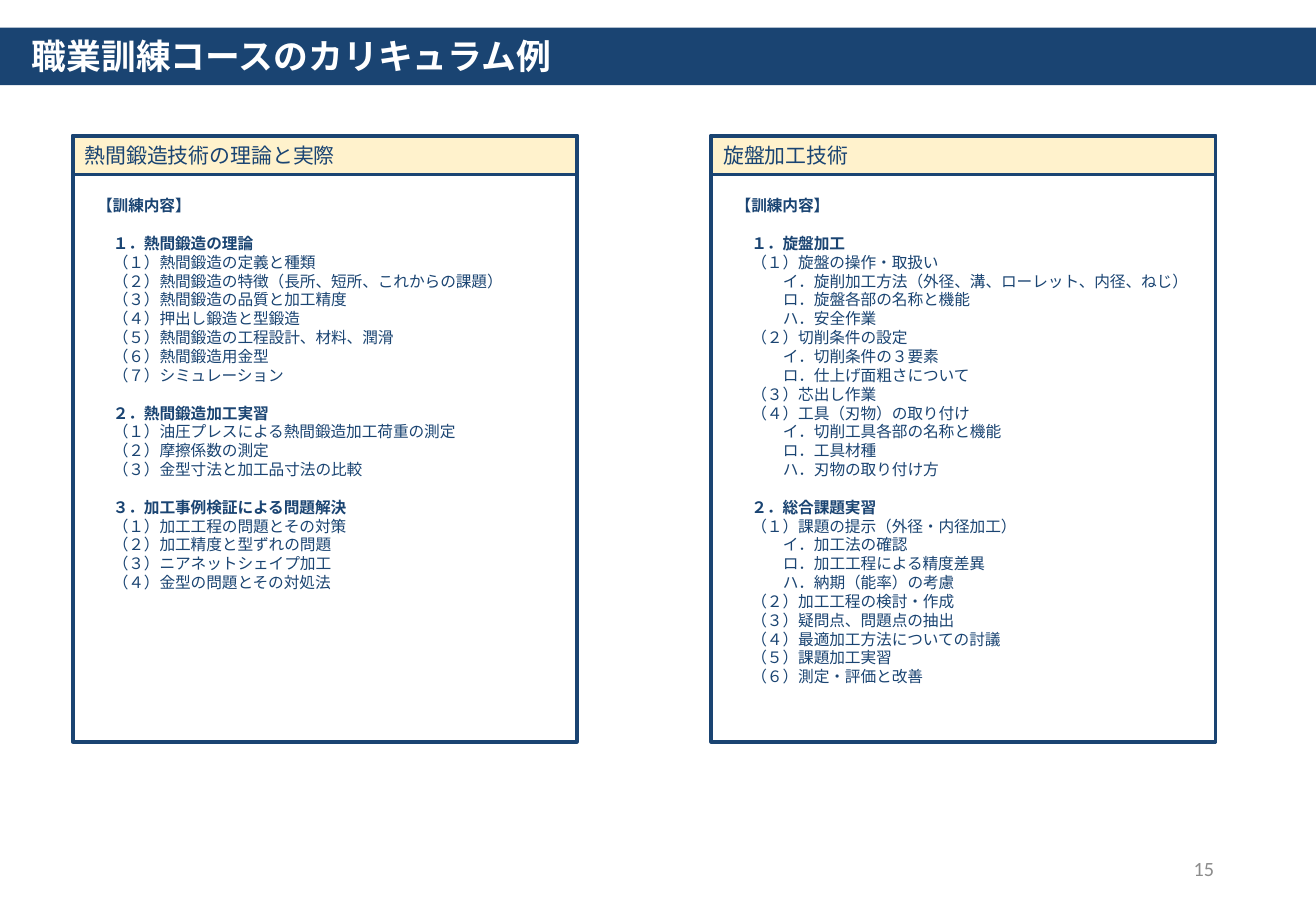
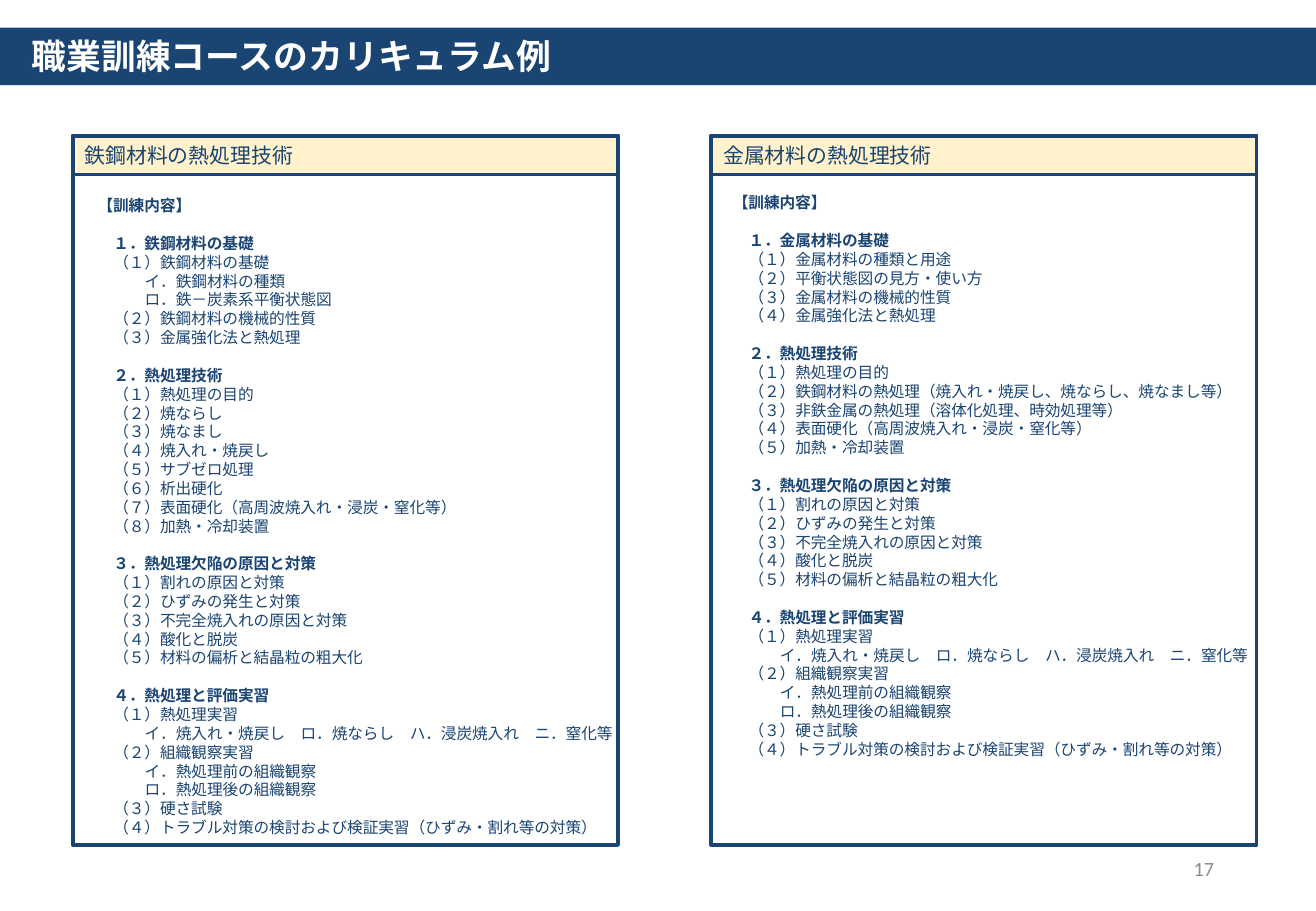
"""Build two slides of vocational training curriculum examples."""
from lxml import etree
from pptx import Presentation
from pptx import util as u
from pptx.dml.color import RGBColor
from pptx.enum import lang, shapes, text
from pptx.oxml.ns import qn

COLORS = {"navy": "1A4472", "cream": "FFF2CC", "white": "FFFFFF", "grey": "8C8C8C"}
JAPANESE_FONT, NUMBER_FONT = "Noto Sans CJK JP", "Calibri"
TITLE = "職業訓練コースのカリキュラム例"
LEAD = "【訓練内容】"
BODY_SIZE, LINE_PITCH = 9.3, 11.17
PANEL_LEFTS, PANEL_TOP, HEADER_HEIGHT = (1.52, 14.87), 2.84, 0.81

DEFECTS = ("３．熱処理欠陥の原因と対策", [
    "（１）割れの原因と対策",
    "（２）ひずみの発生と対策",
    "（３）不完全焼入れの原因と対策",
    "（４）酸化と脱炭",
    "（５）材料の偏析と結晶粒の粗大化",
])
PRACTICE = ("４．熱処理と評価実習", [
    "（１）熱処理実習",
    "イ．焼入れ・焼戻し　ロ．焼ならし　ハ．浸炭焼入れ　ニ．窒化等",
    "（２）組織観察実習",
    "イ．熱処理前の組織観察",
    "ロ．熱処理後の組織観察",
    "（３）硬さ試験",
    "（４）トラブル対策の検討および検証実習（ひずみ・割れ等の対策）",
])

FORGING = [
    ("１．熱間鍛造の理論", [
        "（１）熱間鍛造の定義と種類",
        "（２）熱間鍛造の特徴（長所、短所、これからの課題）",
        "（３）熱間鍛造の品質と加工精度",
        "（４）押出し鍛造と型鍛造",
        "（５）熱間鍛造の工程設計、材料、潤滑",
        "（６）熱間鍛造用金型",
        "（７）シミュレーション",
    ]),
    ("２．熱間鍛造加工実習", [
        "（１）油圧プレスによる熱間鍛造加工荷重の測定",
        "（２）摩擦係数の測定",
        "（３）金型寸法と加工品寸法の比較",
    ]),
    ("３．加工事例検証による問題解決", [
        "（１）加工工程の問題とその対策",
        "（２）加工精度と型ずれの問題",
        "（３）ニアネットシェイプ加工",
        "（４）金型の問題とその対処法",
    ]),
]
LATHE = [
    ("１．旋盤加工", [
        "（１）旋盤の操作・取扱い",
        "イ．旋削加工方法（外径、溝、ローレット、内径、ねじ）",
        "ロ．旋盤各部の名称と機能",
        "ハ．安全作業",
        "（２）切削条件の設定",
        "イ．切削条件の３要素",
        "ロ．仕上げ面粗さについて",
        "（３）芯出し作業",
        "（４）工具（刃物）の取り付け",
        "イ．切削工具各部の名称と機能",
        "ロ．工具材種",
        "ハ．刃物の取り付け方",
    ]),
    ("２．総合課題実習", [
        "（１）課題の提示（外径・内径加工）",
        "イ．加工法の確認",
        "ロ．加工工程による精度差異",
        "ハ．納期（能率）の考慮",
        "（２）加工工程の検討・作成",
        "（３）疑問点、問題点の抽出",
        "（４）最適加工方法についての討議",
        "（５）課題加工実習",
        "（６）測定・評価と改善",
    ]),
]
STEEL = [
    ("１．鉄鋼材料の基礎", [
        "（１）鉄鋼材料の基礎",
        "イ．鉄鋼材料の種類",
        "ロ．鉄－炭素系平衡状態図",
        "（２）鉄鋼材料の機械的性質",
        "（３）金属強化法と熱処理",
    ]),
    ("２．熱処理技術", [
        "（１）熱処理の目的",
        "（２）焼ならし",
        "（３）焼なまし",
        "（４）焼入れ・焼戻し",
        "（５）サブゼロ処理",
        "（６）析出硬化",
        "（７）表面硬化（高周波焼入れ・浸炭・窒化等）",
        "（８）加熱・冷却装置",
    ]),
    DEFECTS,
    PRACTICE,
]
METAL = [
    ("１．金属材料の基礎", [
        "（１）金属材料の種類と用途",
        "（２）平衡状態図の見方・使い方",
        "（３）金属材料の機械的性質",
        "（４）金属強化法と熱処理",
    ]),
    ("２．熱処理技術", [
        "（１）熱処理の目的",
        "（２）鉄鋼材料の熱処理（焼入れ・焼戻し、焼ならし、焼なまし等）",
        "（３）非鉄金属の熱処理（溶体化処理、時効処理等）",
        "（４）表面硬化（高周波焼入れ・浸炭・窒化等）",
        "（５）加熱・冷却装置",
    ]),
    DEFECTS,
    PRACTICE,
]

SLIDES = [
    {"number": "15", "size": (10.54, 12.67), "panels": [
        {"header": "熱間鍛造技術の理論と実際", "sections": FORGING, "offset": (0.26, 1.13), "height": 9},
        {"header": "旋盤加工技術", "sections": LATHE, "offset": (0.26, 1.13), "height": 10.6},
    ]},
    {"number": "17", "size": (11.4, 14.83), "panels": [
        {"header": "鉄鋼材料の熱処理技術", "sections": STEEL, "offset": (0.27, 1.13), "height": 14.15},
        {"header": "金属材料の熱処理技術", "sections": METAL, "offset": (0.2, 1.07), "height": 12.57},
    ]},
]


def place(shape, left, top, width, height):
    shape.left, shape.top = u.Cm(left), u.Cm(top)
    shape.width, shape.height = u.Cm(width), u.Cm(height)


def add_box(slide, bounds, fill=None, line=None):
    box = slide.shapes.add_shape(shapes.MSO_SHAPE.RECTANGLE, *map(u.Cm, bounds))
    box.shadow.inherit = False
    if fill:
        box.fill.solid()
        box.fill.fore_color.rgb = RGBColor.from_string(COLORS[fill])
    else:
        box.fill.background()
    if line:
        box.line.color.rgb = RGBColor.from_string(COLORS[line])
        box.line.width = u.Pt(2.25)
    else:
        box.line.fill.background()
    return box


def format_text(paragraph, size, color, bold=False, align=text.PP_ALIGN.LEFT, font=JAPANESE_FONT):
    paragraph.alignment = align
    for run in paragraph.runs:
        run.font.size = u.Pt(size)
        run.font.bold = bold
        run.font.color.rgb = RGBColor.from_string(COLORS[color])
        run.font.name = font
        run.font.language_id = lang.MSO_LANGUAGE_ID.JAPANESE
        latin = run.font._element.find(qn("a:latin"))
        latin.addnext(etree.Element(qn("a:ea"), typeface=font))


def set_frame(shape, anchor, vertical_margin=0.0):
    frame = shape.text_frame
    frame.auto_size = text.MSO_AUTO_SIZE.NONE
    frame.word_wrap = True
    frame.vertical_anchor = anchor
    frame.margin_left = frame.margin_right = u.Cm(0.25)
    frame.margin_top = frame.margin_bottom = u.Cm(vertical_margin)
    return frame


def fill_list(shape, sections):
    rows = [(LEAD, 0, True, 0)]
    for heading, items in sections:
        rows.append((heading, 1, True, LINE_PITCH))
        rows += [(item, 1 if item.startswith("（") else 3, False, 0) for item in items]
    frame = set_frame(shape, text.MSO_ANCHOR.TOP, 0.13)
    frame.text = "\n".join(row[0] for row in rows)
    for paragraph, (_, indent, bold, gap) in zip(frame.paragraphs, rows):
        format_text(paragraph, BODY_SIZE, "navy", bold)
        paragraph.line_spacing = u.Pt(LINE_PITCH)
        paragraph.space_before, paragraph.space_after = u.Pt(gap), u.Pt(0)
        properties = paragraph._p.get_or_add_pPr()
        properties.set("marL", str(u.Pt(BODY_SIZE * indent)))
        properties.set("indent", "0")
        etree.SubElement(properties, qn("a:buNone"))


def add_panel(slide, placeholder, panel, left, width, height):
    add_box(slide, (left, PANEL_TOP, width, height), line="navy")
    header = add_box(slide, (left, PANEL_TOP, width, HEADER_HEIGHT), "cream", "navy")
    frame = set_frame(header, text.MSO_ANCHOR.MIDDLE)
    frame.text = panel["header"]
    format_text(frame.paragraphs[0], 12.4, "navy")
    dx, dy = panel["offset"]
    place(placeholder, left + dx, PANEL_TOP + dy, width + 0.16, panel["height"])
    fill_list(placeholder, panel["sections"])


def add_slide(presentation, content):
    slide = presentation.slides.add_slide(presentation.slide_layouts[3])
    title, *bodies = slide.placeholders
    band = add_box(slide, (0, 0.58, 27.51, 1.2), "navy")
    title._element.addprevious(band._element)
    place(title, 0.1, 0.58, 11.99, 1.17)
    frame = set_frame(title, text.MSO_ANCHOR.MIDDLE)
    frame.text = TITLE
    format_text(frame.paragraphs[0], 20.6, "white", True, text.PP_ALIGN.CENTER)
    for body, panel, left in zip(bodies, content["panels"], PANEL_LEFTS):
        add_panel(slide, body, panel, left, *content["size"])
    number = slide.shapes.add_textbox(*map(u.Cm, (19.43, 17.65, 6.2, 1.02)))
    frame = set_frame(number, text.MSO_ANCHOR.MIDDLE)
    frame.text = content["number"]
    format_text(frame.paragraphs[0], 12, "grey", align=text.PP_ALIGN.RIGHT, font=NUMBER_FONT)


def main():
    presentation = Presentation()
    presentation.slide_width, presentation.slide_height = u.Cm(27.51), u.Cm(19.05)
    for content in SLIDES:
        add_slide(presentation, content)
    presentation.save("out.pptx")


if __name__ == "__main__":
    main()
